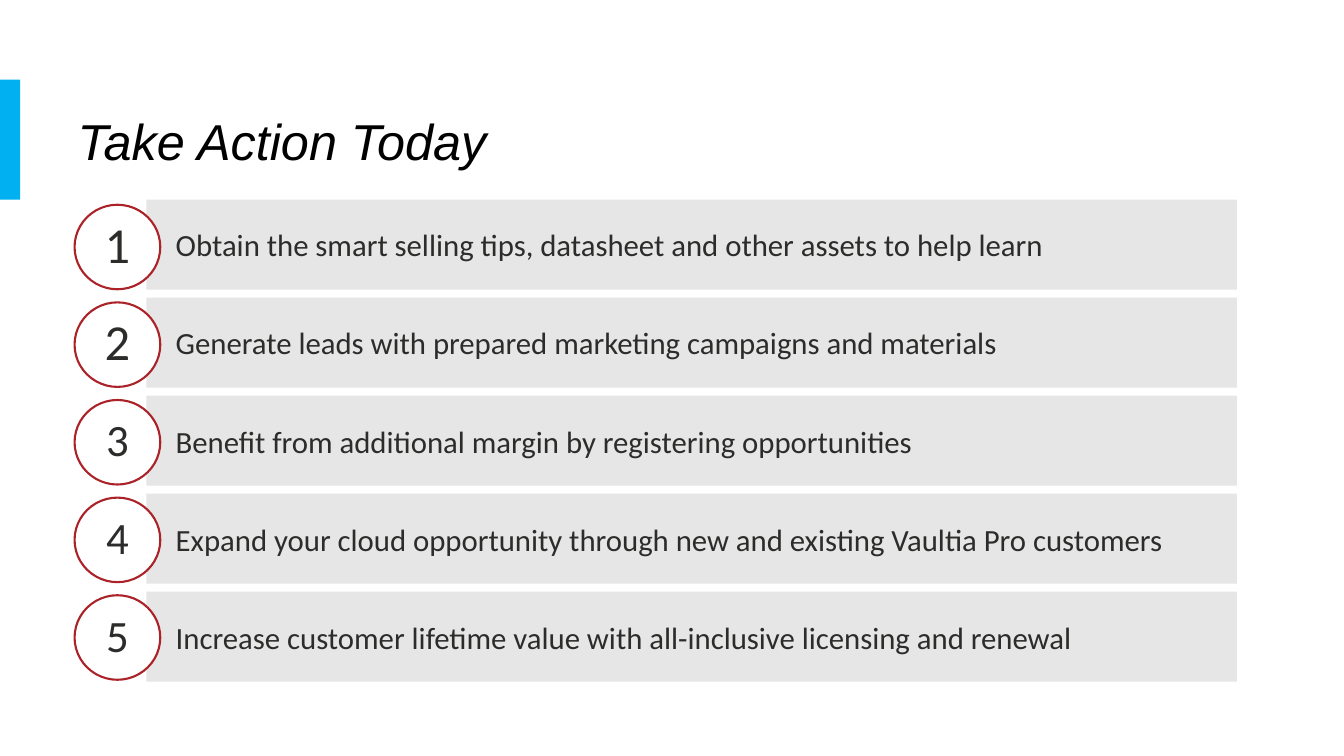
from pptx import Presentation
from pptx.dml.color import RGBColor
from pptx.enum.shapes import MSO_SHAPE
from pptx.enum.text import MSO_ANCHOR, PP_ALIGN
from pptx.util import Cm, Pt

TITLE = "Take Action Today"
ACTIONS = [  # text, size of its number
    ("Obtain the smart selling tips, datasheet and other assets to help learn", 36),
    ("Generate leads with prepared marketing campaigns and materials", 36),
    ("Benefit from additional margin by registering opportunities", 32),
    ("Expand your cloud opportunity through new and existing Vaultia Pro customers", 32),
    ("Increase customer lifetime value with all-inclusive licensing and renewal", 32),
]
COLORS = {"title": "000000", "accent": "00B0F0", "bar": "E6E6E6",
          "text": "2C2C2B", "circle": "FFFFFF", "ring": "AB2328"}

BAR_TOP, BAR_PITCH, BAR_HEIGHT = 5.03, 2.47, 2.27
CIRCLE_TOP, CIRCLE_PITCH = 5.16, 2.46


def color(name):
    return RGBColor.from_string(COLORS[name])


def add_filled(page, kind, left, top, width, height, fill):
    shape = page.shapes.add_shape(kind, Cm(left), Cm(top), Cm(width), Cm(height))
    shape.shadow.inherit = False
    shape.fill.solid()
    shape.fill.fore_color.rgb = color(fill)
    shape.line.fill.background()
    return shape


def write(shape, text, size, ink, font, align):
    frame = shape.text_frame
    frame.word_wrap = True
    frame.vertical_anchor = MSO_ANCHOR.MIDDLE
    para = frame.paragraphs[0]
    para.text = text
    para.alignment = align
    para.font.size = Pt(size)
    para.font.name = font
    para.font.color.rgb = color(ink)
    return para


def add_title(page):
    title = page.shapes.title
    title.left, title.top, title.width, title.height = Cm(1.7), Cm(2.13), Cm(30.48), Cm(3.02)
    para = write(title, TITLE, 36, "title", "Arial", PP_ALIGN.LEFT)
    para.font.italic = True
    para.line_spacing = 0.9


def add_action(page, index, text, number_size):
    bar = add_filled(page, MSO_SHAPE.RECTANGLE, 3.69, BAR_TOP + index * BAR_PITCH,
                     27.48, BAR_HEIGHT, "bar")
    frame = bar.text_frame
    frame.margin_left = Cm(0.74)
    frame.margin_top = frame.margin_right = frame.margin_bottom = 0
    write(bar, text, 22, "text", "Calibri", PP_ALIGN.LEFT)

    circle = add_filled(page, MSO_SHAPE.OVAL, 1.88, CIRCLE_TOP + index * CIRCLE_PITCH,
                        2.16, 2.13, "circle")
    circle.line.color.rgb = color("ring")
    circle.line.width = Pt(1.5)
    number = write(circle, str(index + 1), number_size, "text", "Calibri", PP_ALIGN.CENTER)
    number.line_spacing = 0.9


def main():
    deck = Presentation()
    deck.slide_width, deck.slide_height = Cm(33.87), Cm(19.05)
    page = deck.slides.add_slide(deck.slide_layouts[5])
    add_title(page)
    add_filled(page, MSO_SHAPE.RECTANGLE, 0, 2.01, 0.51, 3.02, "accent")
    for index, (text, number_size) in enumerate(ACTIONS):
        add_action(page, index, text, number_size)
    deck.save("out.pptx")


if __name__ == "__main__":
    main()
